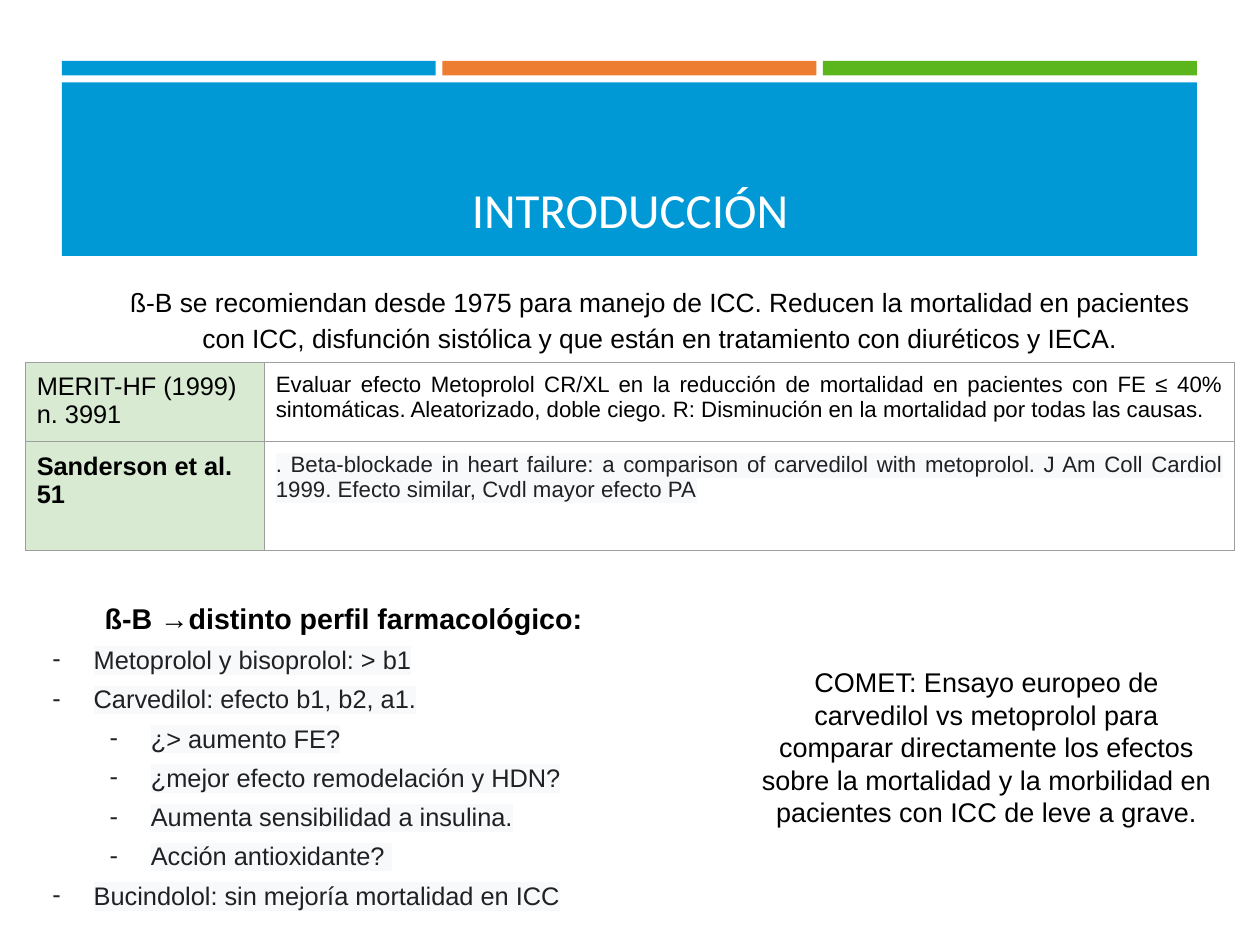
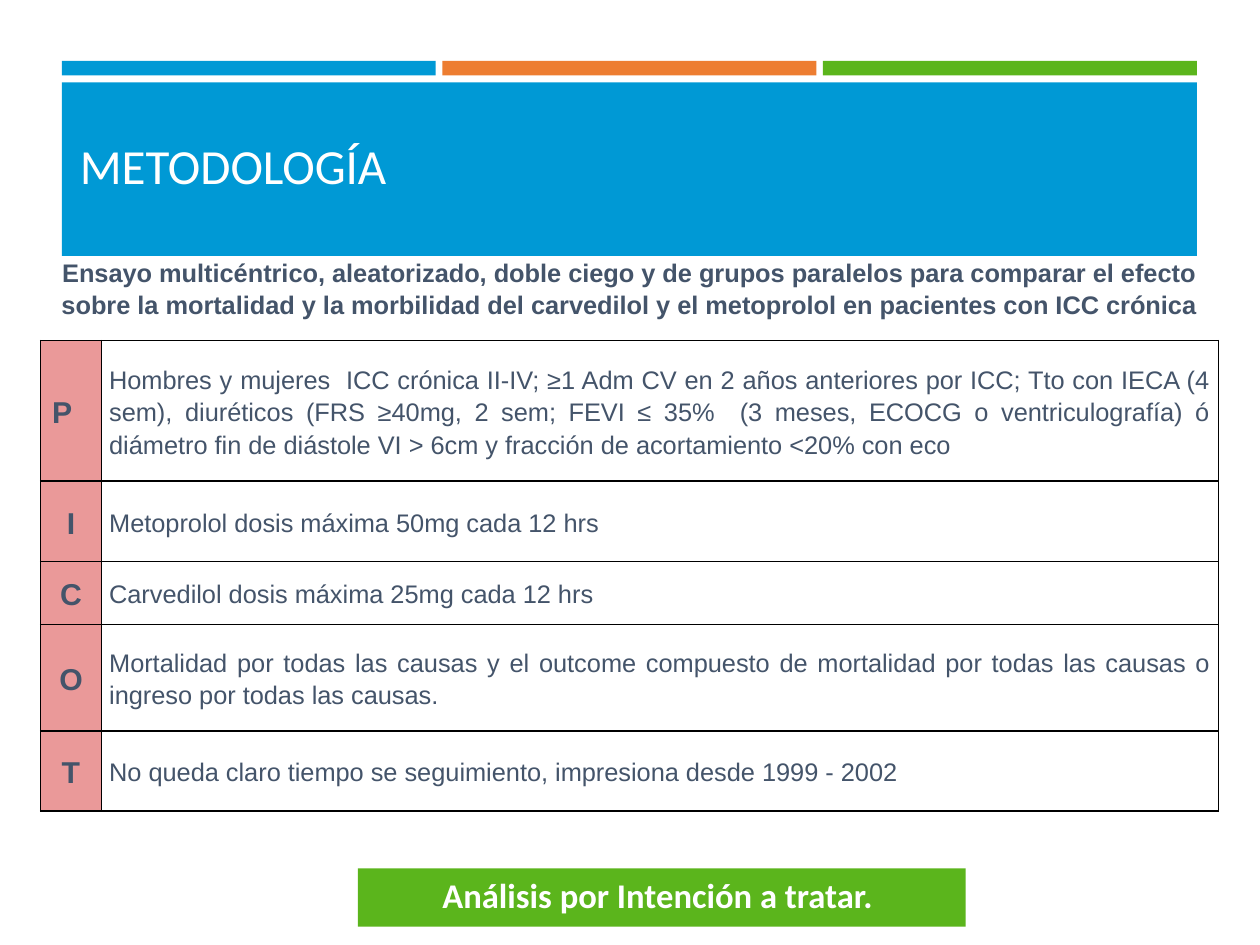
from lxml import etree
from pptx import Presentation
from pptx.dml.color import RGBColor
from pptx.enum import shapes, text
from pptx.oxml import ns
from pptx.util import Pt

COLORS = {
    "blue": "0099D5", "orange": "ED7D31", "green": "5BB51C",
    "white": "FFFFFF", "black": "000000", "ink": "202124", "slate": "44546A",
    "highlight": "F8F9FA", "mint": "D9EAD3", "rose": "EA9999", "gray": "9E9E9E",
}
LEFT, CENTER, JUSTIFY = text.PP_ALIGN.LEFT, text.PP_ALIGN.CENTER, text.PP_ALIGN.JUSTIFY
TOP, MIDDLE = text.MSO_ANCHOR.TOP, text.MSO_ANCHOR.MIDDLE


def write(frame, lines, size, color="black", align=LEFT, bold=False,
          font="Arial", spacing=1.0, before=0, highlight=False):
    """Fill a text frame with one paragraph per line, all in one style."""
    frame.word_wrap = True
    frame.text = "\n".join(lines)
    for paragraph in frame.paragraphs:
        paragraph.alignment = align
        paragraph.line_spacing = spacing
        paragraph.space_before = Pt(before)
        for run in paragraph.runs:
            run.font.size, run.font.bold, run.font.name = Pt(size), bold, font
            run.font.color.rgb = RGBColor.from_string(COLORS[color])
            if highlight:
                mark = etree.Element(ns.qn("a:highlight"))
                etree.SubElement(mark, ns.qn("a:srgbClr"), val=COLORS["highlight"])
                run.font._element.find(ns.qn("a:solidFill")).addnext(mark)


def add_grid(slide, left, top, widths, heights, line, weight, label_fill, side, anchor):
    """Add a bordered table whose first column holds filled labels."""
    table = slide.shapes.add_table(len(heights), len(widths), Pt(left), Pt(top),
                                   Pt(sum(widths)), Pt(sum(heights))).table
    table.first_row = table.horz_banding = False
    for column, width in zip(table.columns, widths):
        column.width = Pt(width)
    for row, height in zip(table.rows, heights):
        row.height = Pt(height)
        for index, cell in enumerate(row.cells):
            cell.margin_left = cell.margin_right = Pt(side)
            cell.margin_top = cell.margin_bottom = Pt(6.85)
            cell.vertical_anchor = anchor
            properties = cell._tc.get_or_add_tcPr()
            for edge in ("lnL", "lnR", "lnT", "lnB"):
                border = etree.SubElement(properties, ns.qn("a:" + edge), w=str(Pt(weight)))
                fill = etree.SubElement(border, ns.qn("a:solidFill"))
                etree.SubElement(fill, ns.qn("a:srgbClr"), val=COLORS[line])
            if index == 0:
                cell.fill.solid()
                cell.fill.fore_color.rgb = RGBColor.from_string(COLORS[label_fill])
            else:
                cell.fill.background()
    return table


deck = Presentation()
deck.slide_width, deck.slide_height = Pt(793.75), Pt(595.25)
intro, method = [deck.slides.add_slide(deck.slide_layouts[6]) for _ in range(2)]

# Shared bands: three equal strips over a title band, plus the green closing bar
MARGIN, BAND_WIDTH, GAP = 39, 715, 4.2
strip = (BAND_WIDTH - 2 * GAP) / 3
bands = [(MARGIN + i * (strip + GAP), 38.3, strip, 9.2, color)
         for i, color in enumerate(("blue", "orange", "green"))]
bands.append((MARGIN, 52, BAND_WIDTH, 109.2, "blue"))
closing_bar = (225.4, 547, 383, 36.7, "green")

for slide, extra in ((intro, []), (method, [closing_bar])):
    for x, y, width, height, color in bands + extra:
        band = slide.shapes.add_shape(shapes.MSO_SHAPE.RECTANGLE,
                                      Pt(x), Pt(y), Pt(width), Pt(height))
        band.shadow.inherit = False
        band.fill.solid()
        band.fill.fore_color.rgb = RGBColor.from_string(COLORS[color])
        band.line.fill.background()
band.text_frame.vertical_anchor = TOP
write(band.text_frame, ["Análisis por Intención a tratar. "], 21.8, "white", CENTER,
      True, "Calibri")

# Titles
for slide, title, x, y, align in ((intro, "INTRODUCCIÓN", 50.2, 59.4, CENTER),
                                  (method, "METODOLOGÍA", 43.2, 31.7, LEFT)):
    heading = slide.shapes.add_textbox(Pt(x), Pt(y), Pt(693.4), Pt(94.3)).text_frame
    heading.vertical_anchor = text.MSO_ANCHOR.BOTTOM
    write(heading, [title], 30.9, "white", align, font="Calibri")

# Introduction: opening statement and the COMET summary
for x, y, width, height, size, spacing, statement in (
    (68.5, 173.5, 693.4, 54, 16.6, 1.15,
     "ß-B se recomiendan desde 1975 para manejo de ICC. Reducen la mortalidad en pacientes "
     "con ICC, disfunción sistólica y que están en tratamiento con diuréticos y IECA."),
    (471, 415.9, 301, 110, 17, 1.0,
     "COMET: Ensayo europeo de carvedilol vs metoprolol para comparar directamente los "
     "efectos sobre la mortalidad y la morbilidad en pacientes con ICC de leve a grave."),
):
    summary = intro.shapes.add_textbox(Pt(x), Pt(y), Pt(width), Pt(height))
    write(summary.text_frame, [statement], size, align=CENTER, spacing=spacing)

# Introduction: earlier trials
trials = add_grid(intro, 16, 228.4, [150.6, 611.3], [50, 68.4], "gray", 0.75, "mint", 7.2, TOP)
for cell in trials.rows[0].cells:
    cell.margin_top, cell.margin_bottom = Pt(6.2), Pt(5)
trials.cell(0, 1).fill.solid()
trials.cell(0, 1).fill.fore_color.rgb = RGBColor.from_string(COLORS["white"])
write(trials.cell(0, 0).text_frame, ["MERIT-HF (1999)", "n. 3991"], 16)
write(trials.cell(0, 1).text_frame, [
    "Evaluar efecto Metoprolol CR/XL en la reducción de mortalidad en pacientes con FE ≤ 40% "
    "sintomáticas. Aleatorizado, doble ciego. R: Disminución en la mortalidad por todas las "
    "causas."], 14, align=JUSTIFY)
write(trials.cell(1, 0).text_frame, ["Sanderson et al.", "51"], 16, bold=True)
write(trials.cell(1, 1).text_frame, [
    ". Beta-blockade in heart failure: a comparison of carvedilol with metoprolol. J Am Coll "
    "Cardiol 1999. Efecto similar, Cvdl mayor efecto PA"], 14, "ink", JUSTIFY, highlight=True)

# Introduction: pharmacological profile, a heading over a two-level list
profile = [
    (0, "Metoprolol y bisoprolol: > b1"),
    (0, "Carvedilol: efecto b1, b2, a1."),
    (1, "¿> aumento FE?"),
    (1, "¿mejor efecto remodelación y HDN?"),
    (1, "Aumenta sensibilidad a insulina."),
    (1, "Acción antioxidante? "),
    (0, "Bucindolol: sin mejoría mortalidad en ICC"),
]
profile_frame = intro.shapes.add_textbox(Pt(16), Pt(371.8), Pt(401), Pt(202)).text_frame
write(profile_frame, ["ß-B →distinto perfil farmacológico:"] + [item for _, item in profile],
      16, "ink", spacing=1.29, highlight=True)
profile_heading, *profile_items = profile_frame.paragraphs
profile_heading.alignment, profile_heading.line_spacing = CENTER, 1.15
for run in profile_heading.runs:
    run.font.size, run.font.bold = Pt(18), True
    run.font.color.rgb = RGBColor.from_string(COLORS["black"])
    run.font._element.remove(run.font._element.find(ns.qn("a:highlight")))
for item, (level, _) in zip(profile_items, profile):
    item.level = level
    properties = item._p.get_or_add_pPr()
    properties.set("marL", str(Pt(36 * (level + 1))))
    properties.set("indent", str(Pt(-26)))
    bullet_color = etree.SubElement(properties, ns.qn("a:buClr"))
    etree.SubElement(bullet_color, ns.qn("a:srgbClr"), val=COLORS["ink"])
    etree.SubElement(properties, ns.qn("a:buFont"), typeface="Arial")
    etree.SubElement(properties, ns.qn("a:buChar"), char="-")

# Methodology: PICOT table under a merged summary row
picot = [
    ("P", "Hombres y mujeres  ICC crónica II-IV; ≥1 Adm CV en 2 años anteriores por ICC; Tto con "
          "IECA (4 sem), diuréticos (FRS ≥40mg, 2 sem; FEVI ≤ 35%  (3 meses, ECOCG o "
          "ventriculografía) ó diámetro fin de diástole VI > 6cm y fracción de acortamiento "
          "<20% con eco"),
    ("I", "Metoprolol dosis máxima 50mg cada 12 hrs"),
    ("C", "Carvedilol dosis máxima 25mg cada 12 hrs"),
    ("O", "Mortalidad por todas las causas y el outcome compuesto de mortalidad por todas las "
          "causas o ingreso por todas las causas."),
    ("T", "No queda claro tiempo se seguimiento, impresiona desde 1999 - 2002"),
]
design = add_grid(method, 25.6, 147.6, [38.2, 703.8], [67, 88.5, 50.4, 36.7, 67, 50.4],
                  "black", 1, "rose", 5, MIDDLE)
for row, (letter, detail) in enumerate(picot, start=1):
    write(design.cell(row, 0).text_frame, [letter], 19, "slate", CENTER, True,
          spacing=1.15, before=12)
    write(design.cell(row, 1).text_frame, [detail], 16, "slate", JUSTIFY,
          spacing=1.15, before=12)
design.cell(1, 0).margin_right = Pt(16)

overview = design.cell(0, 0)
for cell in (overview, design.cell(0, 1)):
    cell.fill.background()
    for edge in ("lnL", "lnR", "lnT"):
        border = cell._tc.tcPr.find(ns.qn("a:" + edge))
        border.remove(border[0])
        etree.SubElement(border, ns.qn("a:noFill"))
overview.merge(design.cell(0, 1))
write(overview.text_frame, [
    "Ensayo multicéntrico, aleatorizado, doble ciego y de grupos paralelos para comparar el "
    "efecto sobre la mortalidad y la morbilidad del carvedilol y el metoprolol en pacientes "
    "con ICC crónica"], 16, "slate", CENTER, True, spacing=1.15, before=12)

deck.save("out.pptx")
